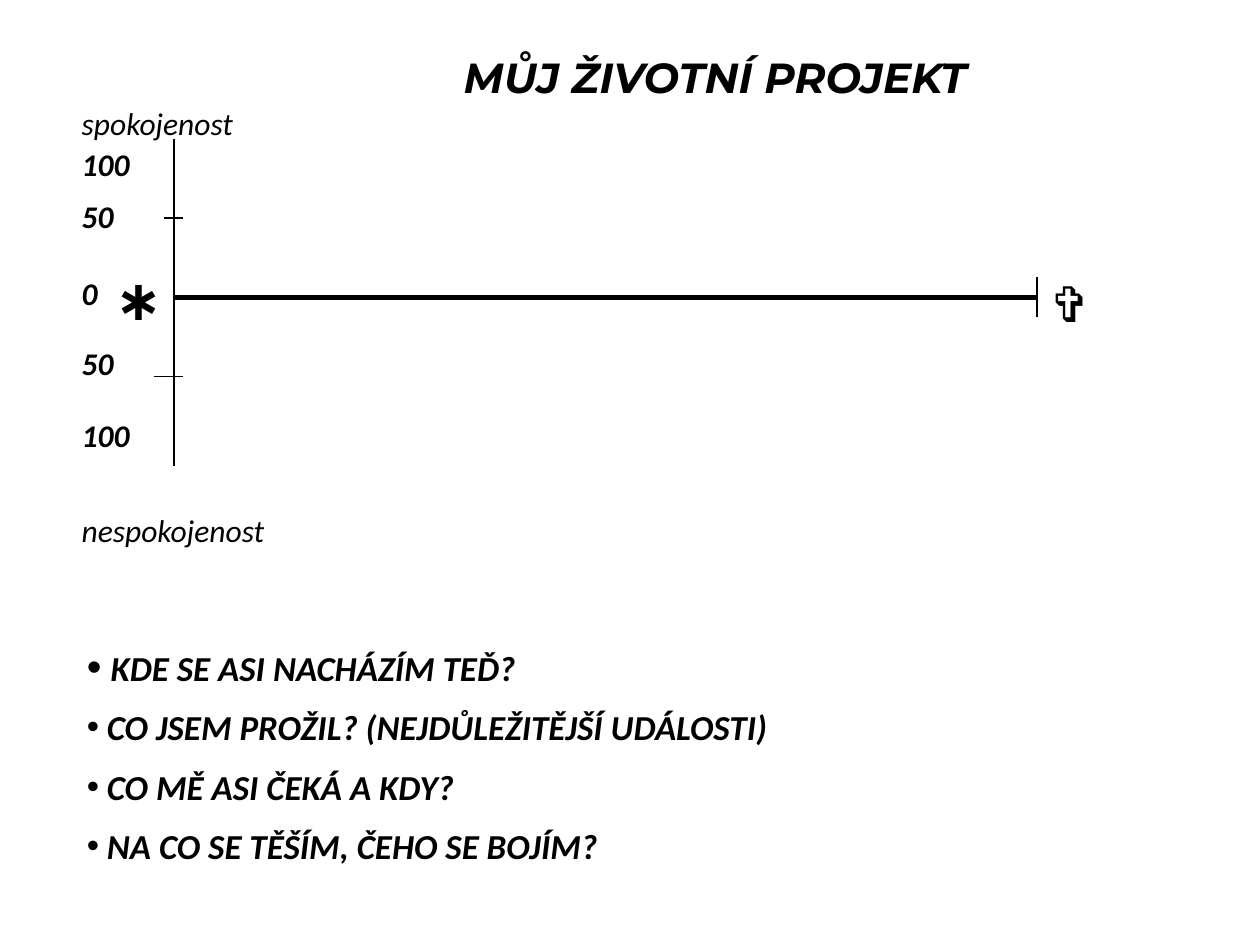
from dataclasses import dataclass

from lxml.etree import SubElement
from pptx import Presentation
from pptx.dml.color import RGBColor
from pptx.enum.shapes import MSO_CONNECTOR
from pptx.enum.text import MSO_ANCHOR, MSO_AUTO_SIZE, PP_ALIGN
from pptx.oxml.ns import qn
from pptx.slide import Slide
from pptx.util import Inches, Pt

BLACK = RGBColor(0x00, 0x00, 0x00)

AXIS_LEFT, AXIS_RIGHT, AXIS_MIDDLE = 1.38, 8.23, 2.36
SCALE_LABELS = [("100", 0), ("50", 8), ("0", 22.5), ("50", 18.5), ("100", 19.5)]
TICKS = [
    (AXIS_LEFT, 2.2, AXIS_LEFT, 2.44),
    (AXIS_RIGHT, 2.2, AXIS_RIGHT, 2.52),
    (AXIS_LEFT, 1.1, AXIS_LEFT, 3.7),
    (1.3, 1.73, 1.45, 1.73),
    (1.22, 2.99, 1.45, 2.99),
]
QUESTIONS = [
    "KDE SE ASI NACHÁZÍM TEĎ?",
    "CO JSEM PROŽIL? (NEJDŮLEŽITĚJŠÍ UDÁLOSTI)",
    "CO MĚ ASI ČEKÁ A KDY?",
    "NA CO SE TĚŠÍM, ČEHO SE BOJÍM?",
]


def write(para, text, size=18, font="Calibri", bold=False, italic=False, before=0):
    para.alignment = PP_ALIGN.LEFT
    para.space_before = Pt(before)
    span = para.add_run()
    span.text = text
    span.font.name = font
    span.font.size = Pt(size)
    span.font.bold = bold
    span.font.italic = italic
    span.font.color.rgb = BLACK


def add_bullet(para, indent, percent):
    properties = para._p.get_or_add_pPr()
    properties.set("marL", str(Inches(indent)))
    properties.set("indent", str(-Inches(indent)))
    SubElement(properties, qn("a:buSzPct"), val=str(percent * 1000))
    SubElement(properties, qn("a:buFont"), typeface="Arial")
    SubElement(properties, qn("a:buChar"), char="•")


@dataclass
class SlideBuilder:
    page: Slide
    color: RGBColor = BLACK
    thin: float = 0.75

    def place(self, shape, left, top, width, height):
        shape.left, shape.top = Inches(left), Inches(top)
        shape.width, shape.height = Inches(width), Inches(height)
        frame = shape.text_frame
        frame.word_wrap = True
        frame.auto_size = MSO_AUTO_SIZE.NONE
        frame.vertical_anchor = MSO_ANCHOR.TOP
        return frame

    def title(self, text, *bounds, **style):
        frame = self.place(self.page.shapes.title, *bounds)
        write(frame.paragraphs[0], text, **style)

    def box(self, *bounds):
        return self.place(self.page.shapes.add_textbox(0, 0, 0, 0), *bounds)

    def label(self, text, *bounds, **style):
        write(self.box(*bounds).paragraphs[0], text, **style)

    def scale(self, labels, *bounds):
        frame = self.box(*bounds)
        for index, (text, before) in enumerate(labels):
            para = frame.add_paragraph() if index else frame.paragraphs[0]
            write(para, text, bold=True, italic=True, before=before)

    def bullets(self, texts, *bounds):
        frame = self.box(*bounds)
        for index, text in enumerate(texts):
            para = frame.add_paragraph() if index else frame.paragraphs[0]
            write(para, text, size=20, bold=True, italic=True, before=10 if index else 0)
            add_bullet(para, *((0.16, 100) if index else (0.19, 120)))

    def line(self, start_x, start_y, end_x, end_y, width=None):
        ends = [Inches(value) for value in (start_x, start_y, end_x, end_y)]
        connector = self.page.shapes.add_connector(MSO_CONNECTOR.STRAIGHT, *ends)
        connector.line.color.rgb = self.color
        connector.line.width = Pt(width or self.thin)
        SubElement(connector._element.spPr, qn("a:effectLst"))


def main():
    deck = Presentation()
    deck.slide_width, deck.slide_height = Inches(10), Inches(7.5)
    builder = SlideBuilder(deck.slides.add_slide(deck.slide_layouts[5]))

    builder.title("MŮJ ŽIVOTNÍ PROJEKT", 3.58, 0.36, 4.96, 0.5,
                  size=24, font="Montserrat", bold=True, italic=True)
    builder.line(AXIS_LEFT, AXIS_MIDDLE, AXIS_RIGHT, AXIS_MIDDLE, width=3)
    for tick in TICKS:
        builder.line(*tick)
    builder.label("✞", AXIS_RIGHT, 2.12, 0.47, 0.57, size=28)
    builder.label("∗", 0.82, 2.05, 0.63, 0.63, size=32, bold=True)
    builder.scale(SCALE_LABELS, 0.55, 1.1, 0.67, 2.75)
    builder.label("spokojenost", 0.55, 0.78, 2.01, 0.4, italic=True)
    builder.label("nespokojenost", 0.55, 4.01, 2.48, 0.4, italic=True)
    builder.bullets(QUESTIONS, 0.59, 5.08, 8.51, 1.93)

    deck.save("out.pptx")


if __name__ == "__main__":
    main()
